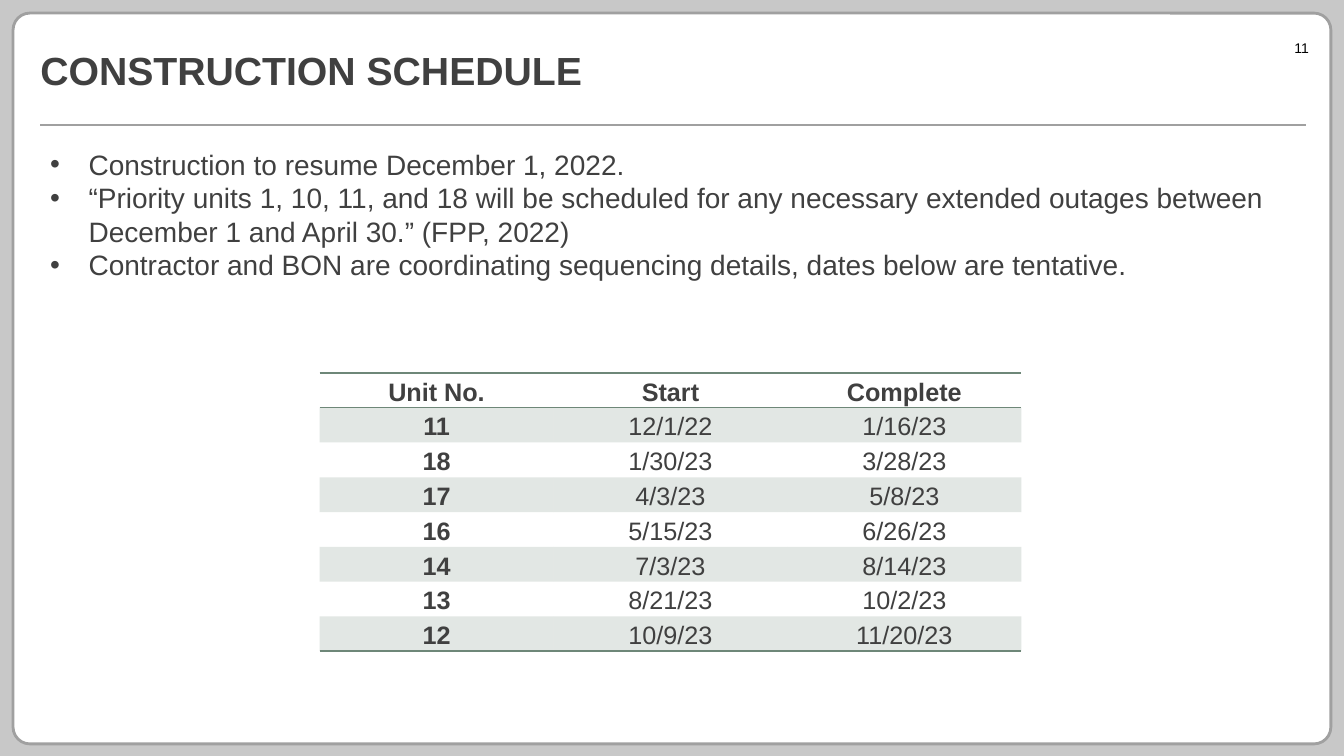
from lxml import etree
from pptx import Presentation
from pptx.dml.color import RGBColor
from pptx.enum.shapes import MSO_CONNECTOR, MSO_SHAPE
from pptx.enum.text import MSO_ANCHOR, MSO_AUTO_SIZE, PP_ALIGN
from pptx.oxml.ns import qn
from pptx.util import Inches, Pt

LEFT, CENTER = PP_ALIGN.LEFT, PP_ALIGN.CENTER
TOP, MIDDLE = MSO_ANCHOR.TOP, MSO_ANCHOR.MIDDLE

# Content
TITLE = "CONSTRUCTION SCHEDULE"
PAGE = "11"
POINTS = [
    "Construction to resume December 1, 2022.",
    "“Priority units 1, 10, 11, and 18 will be scheduled for any necessary "
    "extended outages between December 1 and April 30.” (FPP, 2022)",
    "Contractor and BON are coordinating sequencing details, dates below are tentative.",
]
ROWS = [
    ("Unit No.", "Start", "Complete"),
    ("11", "12/1/22", "1/16/23"),
    ("18", "1/30/23", "3/28/23"),
    ("17", "4/3/23", "5/8/23"),
    ("16", "5/15/23", "6/26/23"),
    ("14", "7/3/23", "8/14/23"),
    ("13", "8/21/23", "10/2/23"),
    ("12", "10/9/23", "11/20/23"),
]

# Look
FONT = "Arial"
COLORS = {"back": "C8C8C8", "panel": "FFFFFF", "rule": "A0A0A0",
          "text": "404040", "page": "000000", "green": "6E8778"}
NO_STYLE = "{2D5ABB26-0587-4C30-8999-92F81FD0307C}"
COL_W, ROW_H = 2.32, 2.76 / len(ROWS)


def rgb(name):
    return RGBColor.from_string(COLORS[name])


def box(x, y, w, h):
    return [Inches(v) for v in (x, y, w, h)]


def add(parent, tag, **attrs):
    item = etree.SubElement(parent, qn(tag))
    for key, value in attrs.items():
        item.set(key, str(value))
    return item


def write(frame, lines, size=20, color="text", bold=False, align=LEFT,
          space=None, bullet=False):
    for i, line in enumerate(lines):
        para = frame.paragraphs[0] if i == 0 else frame.add_paragraph()
        para.alignment = align
        if space:
            para.line_spacing = space
        if bullet:
            props = para._p.get_or_add_pPr()
            props.set("marL", str(Inches(0.38)))
            props.set("indent", str(-Inches(0.38)))
            add(props, "a:buFont", typeface=FONT)
            add(props, "a:buChar", char="•")
        run = para.add_run()
        run.text = line
        font = run.font
        font.name, font.size, font.bold = FONT, Pt(size), bold
        font.color.rgb = rgb(color)


def set_frame(frame, anchor, flush=True):
    frame.word_wrap = True
    frame.auto_size = MSO_AUTO_SIZE.NONE
    frame.vertical_anchor = anchor
    if flush:
        frame.margin_left = frame.margin_right = 0
        frame.margin_top = frame.margin_bottom = 0


def set_edge(cell, tag):
    edge = add(cell._tc.get_or_add_tcPr(), tag, w=Pt(1))
    fill = add(edge, "a:solidFill")
    add(fill, "a:srgbClr", val=COLORS["green"])


def main():
    deck = Presentation()
    deck.slide_width, deck.slide_height = Inches(13.33), Inches(7.5)
    slide = deck.slides.add_slide(deck.slide_layouts[5])
    shapes = slide.shapes
    slide.background.fill.solid()
    slide.background.fill.fore_color.rgb = rgb("back")

    # Panel, sent behind the title
    panel = shapes.add_shape(MSO_SHAPE.ROUNDED_RECTANGLE,
                             *box(0.13, 0.13, 13.07, 7.25))
    panel.adjustments[0] = 0.023
    panel.shadow.inherit = False
    panel.fill.solid()
    panel.fill.fore_color.rgb = rgb("panel")
    panel.line.color.rgb = rgb("rule")
    panel.line.width = Pt(2)
    shapes._spTree.insert(2, panel._element)

    # Title and the rule below it
    title = shapes.title
    title.left, title.top, title.width, title.height = box(0.4, 0.15, 10.8, 1.09)
    set_frame(title.text_frame, MIDDLE)
    write(title.text_frame, [TITLE], size=28, bold=True)
    rule = shapes.add_connector(MSO_CONNECTOR.STRAIGHT,
                                *box(0.4, 1.24, 12.95, 1.24))
    rule.line.color.rgb = rgb("rule")
    rule.line.width = Pt(2)
    add(rule._element.spPr, "a:effectLst")

    # Page number
    page = shapes.add_textbox(*box(12.64, 0.25, 0.54, 0.45)).text_frame
    set_frame(page, MIDDLE)
    write(page, [PAGE], size=10, color="page", align=CENTER)

    # Bullet points
    body = shapes.add_textbox(*box(0.4, 1.41, 12.5, 2.12)).text_frame
    set_frame(body, TOP, flush=False)
    write(body, POINTS, bullet=True)

    # Schedule table
    count = len(ROWS[0])
    table = shapes.add_table(len(ROWS), count, *box(
        3.17, 3.7, COL_W * count, ROW_H * len(ROWS))).table
    table._tbl.tblPr.find(qn("a:tableStyleId")).text = NO_STYLE
    for r, row in enumerate(ROWS):
        table.rows[r].height = Inches(ROW_H)
        for c, text in enumerate(row):
            cell = table.cell(r, c)
            cell.margin_left = cell.margin_right = Inches(0.07)
            cell.margin_top = cell.margin_bottom = 0
            cell.vertical_anchor = MIDDLE
            if r == 0:
                set_edge(cell, "a:lnT")
            if r in (0, len(ROWS) - 1):
                set_edge(cell, "a:lnB")
            if r % 2:
                cell.fill.solid()
                cell.fill.fore_color.rgb = rgb("green")
                tint = cell._tc.tcPr.find(qn("a:solidFill"))[0]
                add(tint, "a:alpha", val=20000)
            else:
                cell.fill.background()
            write(cell.text_frame, [text], size=18, bold=r == 0 or c == 0,
                  align=CENTER, space=1.15)

    deck.save("out.pptx")


if __name__ == "__main__":
    main()
